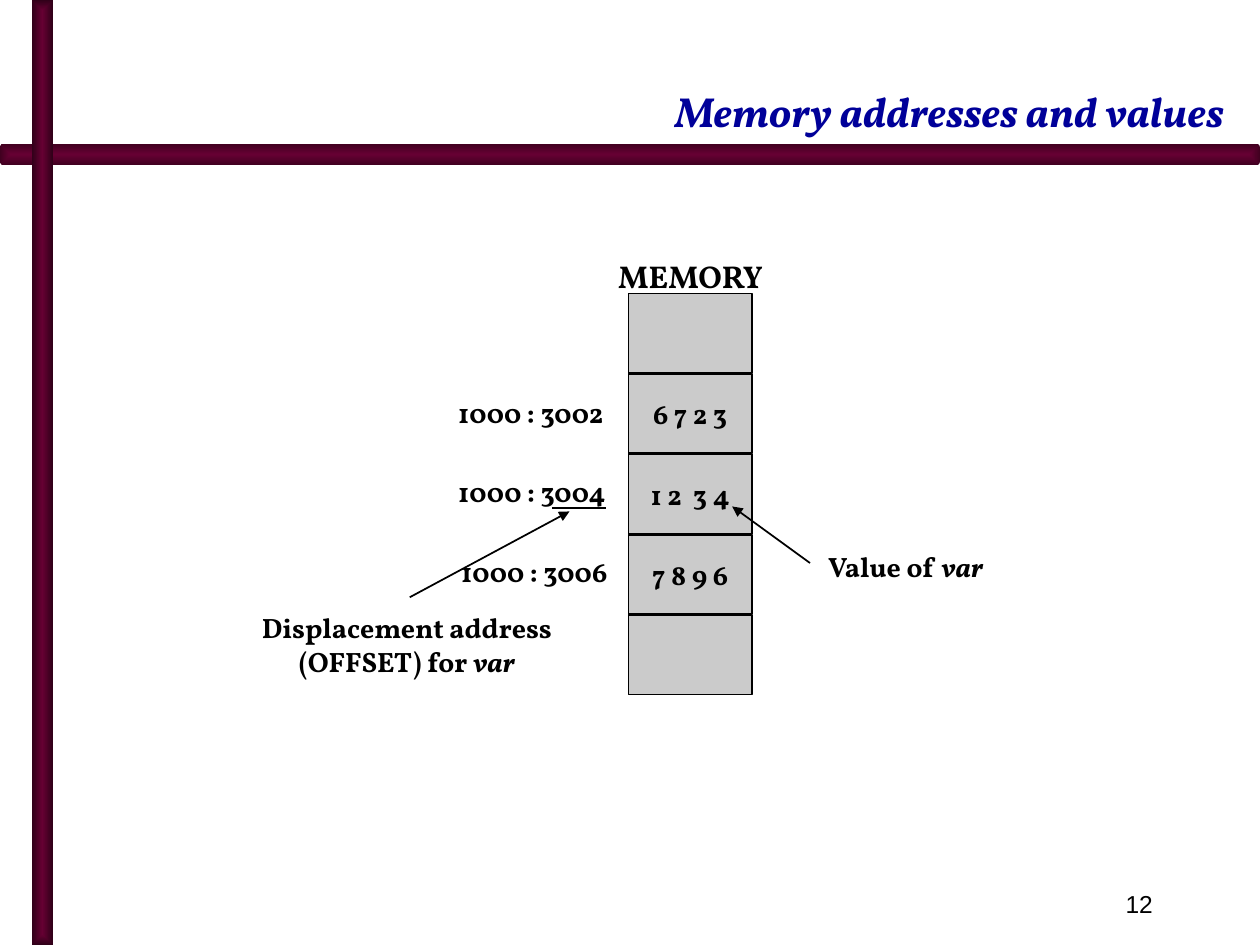
from lxml import etree
from pptx import Presentation
from pptx import util as u
from pptx.dml.color import RGBColor
from pptx.enum import shapes, text
from pptx.oxml import ns

BLACK = RGBColor(0x00, 0x00, 0x00)
NAVY = RGBColor(0x00, 0x00, 0x99)
GREY = RGBColor(0xCB, 0xCB, 0xCB)
MAROON = RGBColor(0x66, 0x00, 0x33)
DARK_MAROON = RGBColor(0x41, 0x00, 0x20)
DEEP_MAROON = RGBColor(0x2F, 0x00, 0x18)

CENTER, RIGHT = text.PP_ALIGN.CENTER, text.PP_ALIGN.RIGHT
TOP, MIDDLE, BOTTOM = (
    text.MSO_ANCHOR.TOP, text.MSO_ANCHOR.MIDDLE, text.MSO_ANCHOR.BOTTOM)
RECTANGLE = shapes.MSO_SHAPE.RECTANGLE
ROUNDED = shapes.MSO_SHAPE.ROUNDED_RECTANGLE


class SlideBuilder:
    font = "Vollkorn"
    size = 16
    line_width = u.Pt(1)

    def __init__(self, slide):
        self.slide = slide

    def set_text(self, frame, parts, align, anchor, size=None, color=BLACK,
                 font=None, bold=True):
        frame.word_wrap = True
        frame.vertical_anchor = anchor
        para = frame.paragraphs[0]
        para.alignment = align
        for words, italic in parts:
            span = para.add_run()
            span.text = words
            span.font.name = font or self.font
            span.font.size = u.Pt(size or self.size)
            span.font.bold = bold
            span.font.italic = italic
            span.font.color.rgb = color

    def label(self, place, parts, align=CENTER, anchor=TOP, **style):
        box = self.slide.shapes.add_textbox(*map(u.Cm, place))
        self.set_text(box.text_frame, parts, align, anchor, **style)

    def shape(self, kind, place):
        shape = self.slide.shapes.add_shape(kind, *map(u.Cm, place))
        shape.shadow.inherit = False
        return shape

    def bar(self, kind, place, edge):
        bar = self.shape(kind, place)
        bar.line.fill.background()
        bar.fill.gradient()
        for stop, color, position in zip(bar.fill.gradient_stops, (MAROON, edge), (0, 1)):
            stop.color.rgb = color
            stop.position = position
        gradient = bar._element.spPr.find(ns.qn("a:gradFill"))
        gradient.remove(gradient.find(ns.qn("a:lin")))
        shade = etree.SubElement(gradient, ns.qn("a:path"), {"path": "shape"})
        etree.SubElement(shade, ns.qn("a:fillToRect"), dict.fromkeys("ltrb", "50000"))

    def cell(self, place, value):
        cell = self.shape(RECTANGLE, place)
        cell.fill.solid()
        cell.fill.fore_color.rgb = GREY
        cell.line.color.rgb = BLACK
        cell.line.width = self.line_width
        if value:
            self.set_text(cell.text_frame, [(value, False)], CENTER, MIDDLE)

    def line(self, ends, arrow=False):
        line = self.slide.shapes.add_connector(
            shapes.MSO_CONNECTOR.STRAIGHT, *map(u.Cm, ends))
        line.line.color.rgb = BLACK
        line.line.width = self.line_width
        properties = line._element.spPr
        if arrow:
            etree.SubElement(properties.find(ns.qn("a:ln")), ns.qn("a:tailEnd"),
                             {"type": "triangle"})
        etree.SubElement(properties, ns.qn("a:effectLst"))


def main():
    deck = Presentation()
    deck.slide_width, deck.slide_height = u.Cm(25.4), u.Cm(19.05)
    page = SlideBuilder(deck.slides.add_slide(deck.slide_layouts[6]))

    page.bar(ROUNDED, (0, 2.9, 25.4, 0.43), DARK_MAROON)
    page.bar(RECTANGLE, (0.64, 0, 0.43, 19.05), DEEP_MAROON)
    page.label((18.21, 17.58, 5.28, 1.27), [("12", False)], RIGHT, MIDDLE,
               size=14, font="Arial", bold=False)
    page.label((2.11, 0.43, 22.81, 2.44), [("Memory addresses and values", True)],
               RIGHT, BOTTOM, size=24, color=NAVY)

    for row, value in enumerate(("", "6 7 2 3", "1 2  3 4", "7 8 9 6", "")):
        page.cell((12.67, 5.92 + 1.62 * row, 2.49, 1.6), value)
    for row, address in enumerate(("1000 : 3002", "1000 : 3004", "1000 : 3006")):
        page.label((8.66 + 0.04 * row, 7.85 + 1.6 * row, 3.76, 0.94),
                   [(address, False)], RIGHT)

    page.label((11.66, 5.05, 4.52, 1.02), [("MEMORY", False)], size=18)
    page.label((4.98, 12.19, 6.45, 1.63),
               [("Displacement address (OFFSET) for ", False), ("var", True)])
    page.label((16.1, 10.95, 4.32, 0.94), [("Value of ", False), ("var", True)])

    page.line((16.33, 11.35, 14.76, 10.21), arrow=True)
    page.line((8.26, 12.04, 11.48, 10.31), arrow=True)
    page.line((11.13, 10.24, 12.22, 10.24))

    deck.save("out.pptx")


if __name__ == "__main__":
    main()
